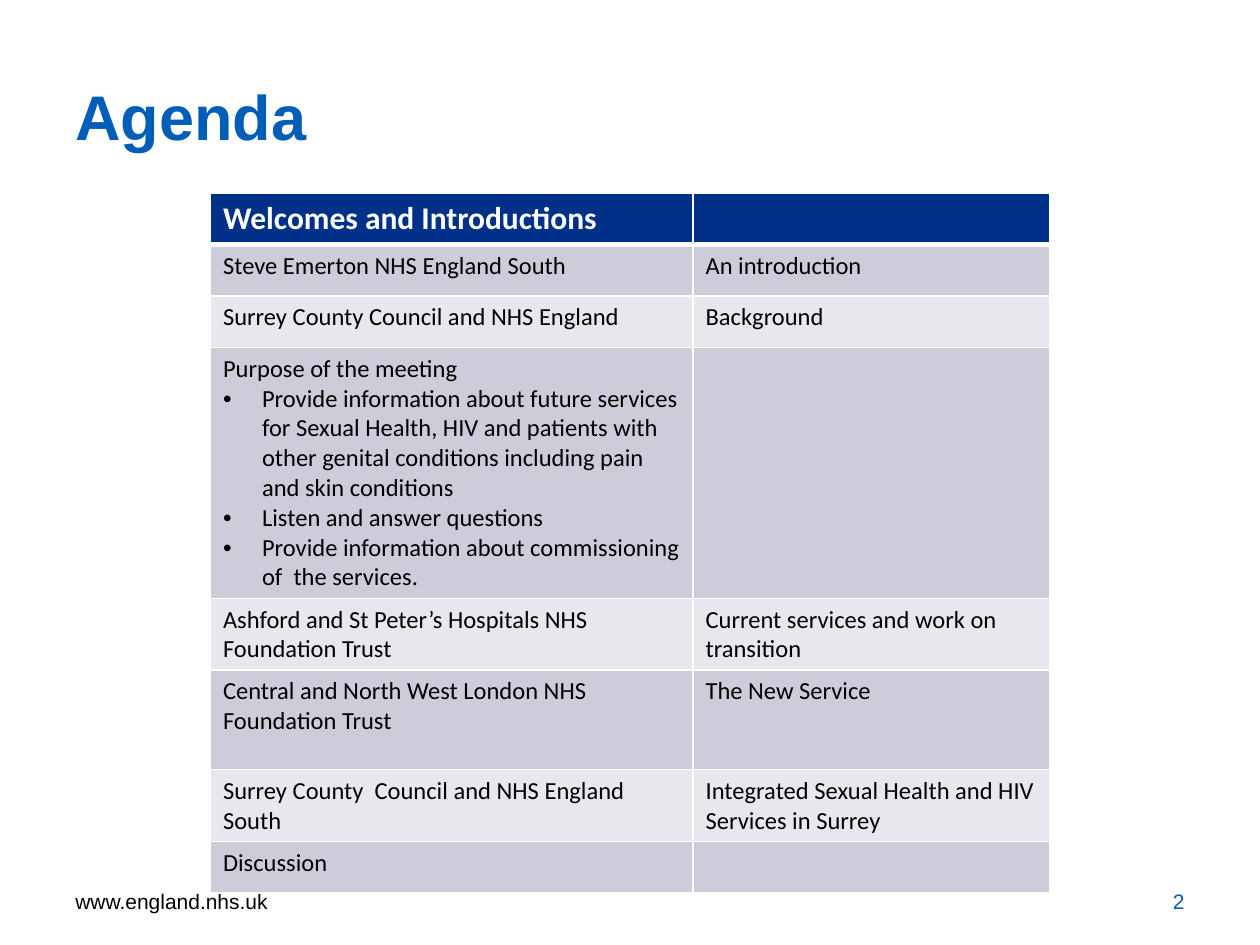
from lxml.etree import SubElement
from pptx import Presentation
from pptx.dml.color import RGBColor
from pptx.enum.text import MSO_ANCHOR, PP_ALIGN
from pptx.oxml.ns import qn
from pptx.util import Inches, Pt


def color(value):
    return RGBColor.from_string(value)


def add_text(para, text, font, size, value, bold=False):
    span = para.add_run()
    span.text = text
    span.font.name = font
    span.font.size = Pt(size)
    span.font.bold = bold
    span.font.color.rgb = color(value)


BLUE, NAVY, WHITE, BLACK = "005EB8", "003087", "FFFFFF", "000000"
BANDS = ["E7E8ED", "CCCDD9"]

deck = Presentation()
deck.slide_width, deck.slide_height = Inches(10), Inches(7.5)
page = deck.slides.add_slide(deck.slide_layouts[6])

# Footer, title and page number
labels = [
    ("www.england.nhs.uk", 0.5, 6.95, 2.33, 0.4, 12, BLACK, PP_ALIGN.LEFT, False),
    ("Agenda", 0.5, 0.55, 8.05, 0.73, 36, BLUE, PP_ALIGN.LEFT, True),
    ("2", 7.17, 6.95, 2.33, 0.4, 12, BLUE, PP_ALIGN.RIGHT, False),
]
for text, left, top, width, height, size, value, align, bold in labels:
    box = page.shapes.add_textbox(Inches(left), Inches(top), Inches(width), Inches(height))
    box.text_frame.word_wrap = True
    box.text_frame.vertical_anchor = MSO_ANCHOR.MIDDLE
    para = box.text_frame.paragraphs[0]
    para.alignment = align
    add_text(para, text, "Arial", size, value, bold)

# Agenda rows: height, topic lines (all after the first are bullets), detail
agenda = [
    (0.41, ["Welcomes and Introductions"], ""),
    (0.41, ["Steve Emerton NHS England South"], "An introduction"),
    (0.41, ["Surrey County Council and NHS England"], "Background"),
    (1.99, ["Purpose of the meeting",
            "Provide information about future services for Sexual Health, HIV and "
            "patients with other genital conditions including pain and skin conditions",
            "Listen and answer questions",
            "Provide information about commissioning of  the services."], ""),
    (0.57, ["Ashford and St Peter’s Hospitals NHS Foundation Trust"],
     "Current services and work on transition"),
    (0.79, ["Central and North West London NHS Foundation Trust"], "The New Service"),
    (0.57, ["Surrey County  Council and NHS England South"],
     "Integrated Sexual Health and HIV Services in Surrey"),
    (0.41, ["Discussion"], ""),
]
total = sum(height for height, _, _ in agenda)
table = page.shapes.add_table(len(agenda), 2, Inches(1.67), Inches(1.53),
                              Inches(6.66), Inches(total)).table
for column, width in zip(table.columns, (3.83, 2.83)):
    column.width = Inches(width)

for row, (height, topic, detail) in enumerate(agenda):
    table.rows[row].height = Inches(height)
    header = row == 0
    for col, lines in enumerate((topic, [detail])):
        cell = table.cell(row, col)

        # Cell text
        for index, line in enumerate(lines):
            frame = cell.text_frame
            para = frame.add_paragraph() if index else frame.paragraphs[0]
            if index:
                props = para._p.get_or_add_pPr()
                props.set("marL", str(Inches(0.31)))
                props.set("indent", str(-Inches(0.31)))
                SubElement(props, qn("a:buFont"), typeface="Arial")
                SubElement(props, qn("a:buChar"), char="•")
            if line:
                add_text(para, line, "Calibri", 18 if header else 14,
                         WHITE if header else BLACK, header)
            else:
                para.font.size = Pt(14)

        # White borders, thicker between the header and the body
        props = cell._tc.get_or_add_tcPr()
        for side in "LRTB":
            thick = (header and side == "B") or (row == 1 and side == "T")
            border = SubElement(props, qn(f"a:ln{side}"), w=str(Pt(3 if thick else 1)))
            fill = SubElement(border, qn("a:solidFill"))
            SubElement(fill, qn("a:srgbClr"), val=WHITE)
        cell.fill.solid()
        cell.fill.fore_color.rgb = color(NAVY if header else BANDS[row % 2])

deck.save("out.pptx")
